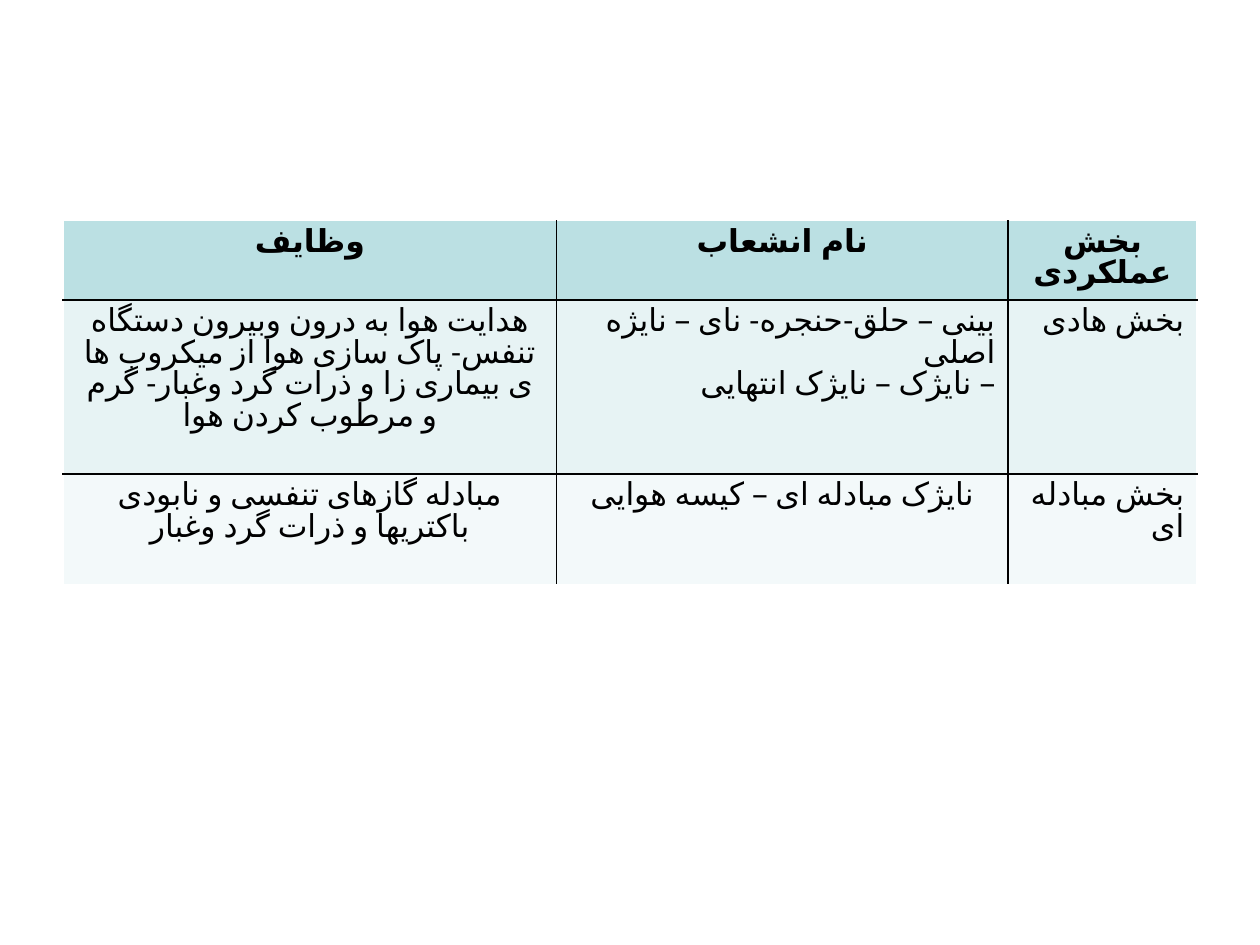
from pptx import Presentation
from pptx.dml.color import RGBColor
from pptx.enum.lang import MSO_LANGUAGE_ID as Language
from pptx.enum.text import PP_ALIGN as Align
from pptx.oxml.ns import qn
from pptx.util import Cm, Pt
from lxml.etree import SubElement

BLACK = RGBColor(0x00, 0x00, 0x00)
WHITE = RGBColor(0xFF, 0xFF, 0xFF)
ROW_FILLS = [
    RGBColor(0xBB, 0xE0, 0xE3),
    RGBColor(0xE7, 0xF3, 0xF4),
    RGBColor(0xF3, 0xF9, 0xFA),
]
FONT_NAME = "Arial"
COLUMN_WIDTHS = [Cm(9.95), Cm(9.1), Cm(3.81)]
ROW_HEIGHTS = [Cm(1.6), Cm(3.51), Cm(2.22)]

# Each cell: alignment and its paragraphs
ROWS = [
    [
        (Align.CENTER, ["وظایف"]),
        (Align.CENTER, ["نام انشعاب"]),
        (Align.CENTER, ["بخش عملکردی"]),
    ],
    [
        (Align.CENTER, ["هدایت هوا به درون وبیرون دستگاه تنفس- پاک سازی هوا از "
                        "میکروب ها ی بیماری زا و ذرات گرد وغبار- گرم و مرطوب کردن هوا"]),
        (Align.RIGHT, ["بینی – حلق-حنجره- نای – نایژه اصلی", "– نایژک – نایژک انتهایی"]),
        (Align.RIGHT, ["بخش هادی"]),
    ],
    [
        (Align.CENTER, ["مبادله گازهای تنفسی و نابودی باکتریها و ذرات گرد وغبار"]),
        (Align.CENTER, ["نایژک مبادله ای – کیسه هوایی"]),
        (Align.RIGHT, ["بخش مبادله ای"]),
    ],
]


def set_attributes(target, values):
    for name, value in values.items():
        setattr(target, name, value)


def write_paragraph(paragraph, text, alignment, bold):
    """Write one right-to-left Persian paragraph."""
    set_attributes(paragraph, {"alignment": alignment, "line_spacing": Pt(18)})
    paragraph._p.get_or_add_pPr().set("rtl", "1")
    run = paragraph.add_run()
    run.text = text
    set_attributes(run.font, {
        "name": FONT_NAME, "size": Pt(18), "bold": bold,
        "language_id": Language.FARSI,
    })
    run.font.color.rgb = BLACK


def set_borders(cell, row, column):
    """Draw white lines on the table's outer edge and black ones inside."""
    outer_edges = {
        "a:lnL": column == 0,
        "a:lnR": column == len(COLUMN_WIDTHS) - 1,
        "a:lnT": row == 0,
        "a:lnB": row == len(ROW_HEIGHTS) - 1,
    }
    properties = cell._tc.get_or_add_tcPr()
    for tag, is_outer in outer_edges.items():
        line = SubElement(properties, qn(tag), w=str(Pt(1)))
        fill = SubElement(line, qn("a:solidFill"))
        SubElement(fill, qn("a:srgbClr"), val=str(WHITE if is_outer else BLACK))


def fill_cell(cell, row, column):
    alignment, texts = ROWS[row][column]
    set_borders(cell, row, column)
    cell.fill.solid()
    cell.fill.fore_color.rgb = ROW_FILLS[row]
    frame = cell.text_frame
    for index, text in enumerate(texts):
        paragraph = frame.add_paragraph() if index else frame.paragraphs[0]
        write_paragraph(paragraph, text, alignment, bold=row == 0)


def add_function_table(slide):
    table = slide.shapes.add_table(
        len(ROW_HEIGHTS), len(COLUMN_WIDTHS), Cm(1.27), Cm(4.45),
        sum(COLUMN_WIDTHS), sum(ROW_HEIGHTS),
    ).table
    set_attributes(table, {"first_row": False, "horz_banding": False})
    for column, width in zip(table.columns, COLUMN_WIDTHS):
        column.width = width
    for row, height in zip(table.rows, ROW_HEIGHTS):
        row.height = height
    for row in range(len(ROW_HEIGHTS)):
        for column in range(len(COLUMN_WIDTHS)):
            fill_cell(table.cell(row, column), row, column)


def main():
    presentation = Presentation()
    set_attributes(presentation, {"slide_width": Cm(25.4), "slide_height": Cm(19.05)})
    slide = presentation.slides.add_slide(presentation.slide_layouts[6])
    add_function_table(slide)
    presentation.save("out.pptx")


if __name__ == "__main__":
    main()
